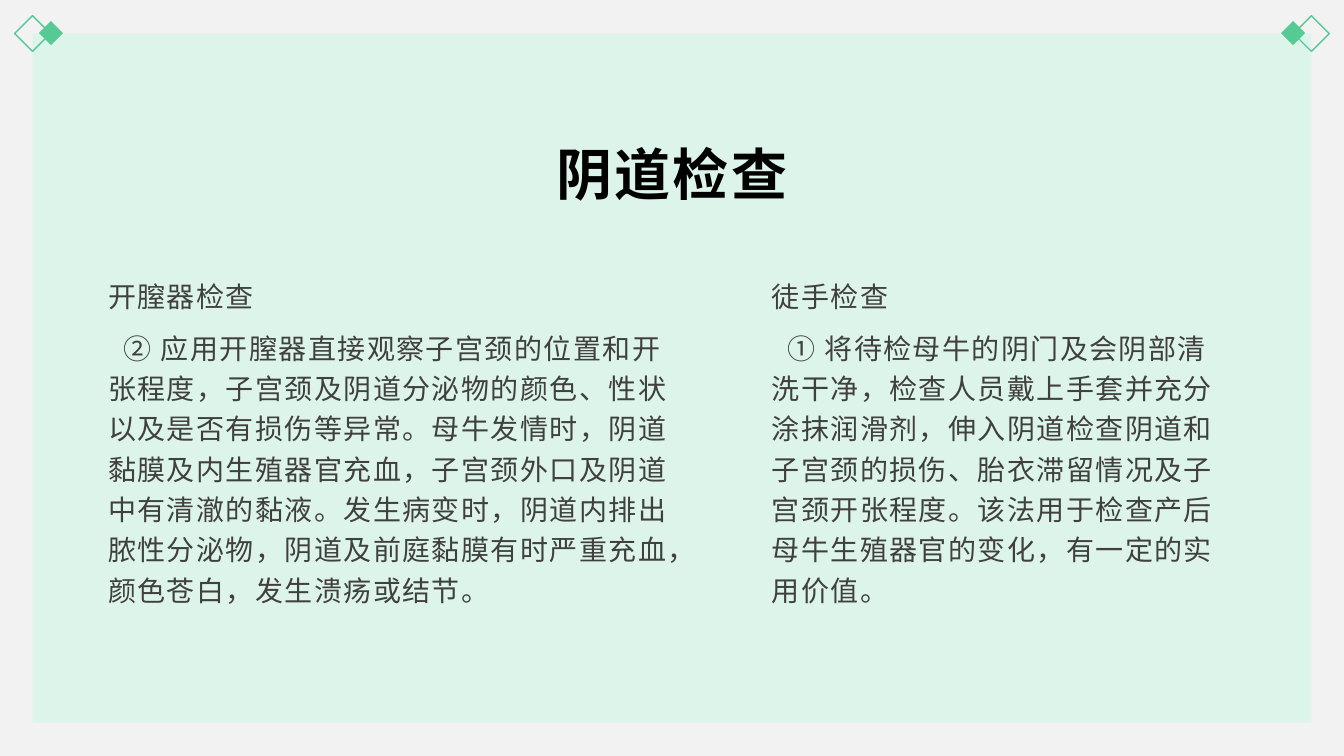
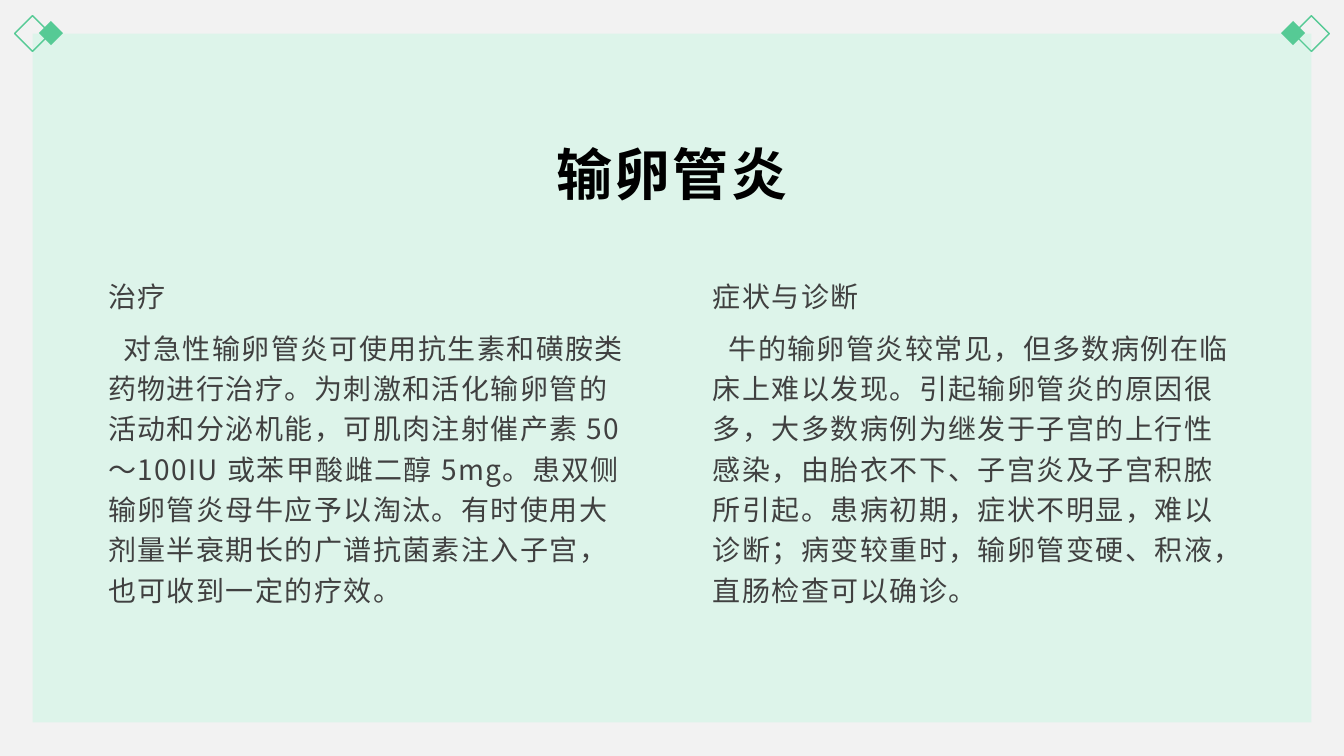
from lxml import etree
from pptx import Presentation
from pptx.dml.color import RGBColor
from pptx.enum.shapes import MSO_SHAPE
from pptx.enum.text import MSO_ANCHOR, MSO_AUTO_SIZE, PP_ALIGN
from pptx.oxml.ns import qn
from pptx.util import Pt

RECTANGLE = MSO_SHAPE.RECTANGLE
DIAMOND = MSO_SHAPE.DIAMOND
MIDDLE = MSO_ANCHOR.MIDDLE
NO_AUTOFIT = MSO_AUTO_SIZE.NONE
CENTER = PP_ALIGN.CENTER
LEFT = PP_ALIGN.LEFT

PAPER = RGBColor(0xF2, 0xF2, 0xF2)
PANEL = RGBColor(0xDD, 0xF4, 0xEA)
GREEN = RGBColor(0x56, 0xCA, 0x95)
BLACK = RGBColor(0x00, 0x00, 0x00)
GRAY = RGBColor(0x40, 0x40, 0x40)

FONT = "Noto Sans CJK SC"
EMU_PER_PX = 9525
WIDTH, HEIGHT = 1280, 720
MARGIN, GAP = 96, 64
CONTENT_WIDTH = WIDTH - 2 * MARGIN
TWO_CONTENT_LAYOUT = 3


def px(length):
    return length * EMU_PER_PX


class Deck:
    """Holds the shared style and the current slide."""

    def __init__(self):
        self.presentation = Presentation()
        self.presentation.slide_width = px(WIDTH)
        self.presentation.slide_height = px(HEIGHT)
        fill = self.presentation.slide_master.background.fill
        fill.solid()
        fill.fore_color.rgb = PAPER
        self.slide = None

    def add_slide(self):
        layout = self.presentation.slide_layouts[TWO_CONTENT_LAYOUT]
        self.slide = self.presentation.slides.add_slide(layout)
        placeholders = list(self.slide.placeholders)
        self.frame()
        # Bring the text in front of the panel
        for placeholder in placeholders:
            self.slide.shapes._spTree.append(placeholder._element)

    def shape(self, shapes, kind, box, fill=None, line=None):
        shape = shapes.add_shape(kind, *map(px, box))
        shape.shadow.inherit = False
        if fill is None:
            shape.fill.background()
        else:
            shape.fill.solid()
            shape.fill.fore_color.rgb = fill
        if line is None:
            shape.line.fill.background()
        else:
            shape.line.color.rgb = line
            shape.line.width = Pt(1)

    def frame(self):
        """Panel with a mirrored pair of diamonds in the top corners."""
        shapes = self.slide.shapes
        self.shape(shapes, RECTANGLE, (31, 32, WIDTH - 62, 656), fill=PANEL)
        for mirrored in (True, False):
            group = shapes.add_group_shape()
            for left, top, size, fill, line in ((37, 20, 23, GREEN, None),
                                                (14, 15, 34, None, GREEN)):
                if mirrored:
                    left = WIDTH - left - size
                self.shape(group.shapes, DIAMOND, (left, top, size, size), fill, line)

    def place(self, placeholder, left, top, width, height):
        placeholder.left, placeholder.top = px(left), px(top)
        placeholder.width, placeholder.height = px(width), px(height)
        text_frame = placeholder.text_frame
        text_frame.word_wrap = True
        text_frame.auto_size = NO_AUTOFIT
        text_frame.vertical_anchor = MIDDLE
        text_frame.margin_left = text_frame.margin_right = px(7)
        text_frame.margin_top = text_frame.margin_bottom = px(3)
        return text_frame

    def format_runs(self, paragraph, size, color, bold, spacing):
        for run in paragraph.runs:
            run.font.size = Pt(size)
            run.font.bold = bold
            run.font.color.rgb = color
            run.font.name = FONT
            properties = run.font._element
            properties.set("spc", str(spacing))
            east_asian = etree.Element(qn("a:ea"), typeface=FONT)
            properties.find(qn("a:latin")).addnext(east_asian)

    def title(self, text):
        text_frame = self.place(self.slide.shapes.title, MARGIN, 128, CONTENT_WIDTH, 74)
        text_frame.text = text
        paragraph = text_frame.paragraphs[0]
        paragraph.alignment = CENTER
        self.format_runs(paragraph, 40, BLACK, True, 160)

    def column(self, index, left, width, heading, body):
        text_frame = self.place(self.slide.placeholders[index], left, 250, width, 338)
        text_frame.text = f"{heading}\n{body}"
        for paragraph, indent in zip(text_frame.paragraphs, (0, 15)):
            properties = paragraph._p.get_or_add_pPr()
            properties.set("marL", "0")
            properties.set("indent", str(px(indent)))
            etree.SubElement(properties, qn("a:buNone"))
            paragraph.alignment = LEFT
            paragraph.line_spacing = 1.2
            paragraph.space_before = Pt(0)
            paragraph.space_after = Pt(8)
            self.format_runs(paragraph, 20, GRAY, False, 100)

    def columns(self, left_width, left_text, right_text):
        self.column(1, MARGIN, left_width, *left_text)
        right_width = CONTENT_WIDTH - left_width - GAP
        self.column(2, MARGIN + left_width + GAP, right_width, *right_text)


# Title, width of the left column, then heading and body of each column
SLIDES = [
    (
        "阴道检查", 568,
        ("开膣器检查",
         "② 应用开膣器直接观察子宫颈的位置和开张程度，子宫颈及阴道分泌物的颜色、性状"
         "以及是否有损伤等异常。母牛发情时，阴道黏膜及内生殖器官充血，子宫颈外口及阴道"
         "中有清澈的黏液。发生病变时，阴道内排出脓性分泌物，阴道及前庭黏膜有时严重充血，"
         "颜色苍白，发生溃疡或结节。"),
        ("徒手检查",
         "① 将待检母牛的阴门及会阴部清洗干净，检查人员戴上手套并充分涂抹润滑剂，"
         "伸入阴道检查阴道和子宫颈的损伤、胎衣滞留情况及子宫颈开张程度。"
         "该法用于检查产后母牛生殖器官的变化，有一定的实用价值。"),
    ),
    (
        "输卵管炎", 512,
        ("治疗",
         "对急性输卵管炎可使用抗生素和磺胺类药物进行治疗。为刺激和活化输卵管的"
         "活动和分泌机能，可肌肉注射催产素 50～100IU 或苯甲酸雌二醇 5mg。患双"
         "侧输卵管炎母牛应予以淘汰。有时使用大剂量半衰期长的广谱抗菌素注入子宫，"
         "也可收到一定的疗效。"),
        ("症状与诊断",
         "牛的输卵管炎较常见，但多数病例在临床上难以发现。引起输卵管炎的原因很"
         "多，大多数病例为继发于子宫的上行性感染，由胎衣不下、子宫炎及子宫积脓"
         "所引起。患病初期，症状不明显，难以诊断；病变较重时，输卵管变硬、积液，"
         "直肠检查可以确诊。"),
    ),
]


def main():
    deck = Deck()
    for title, left_width, left_text, right_text in SLIDES:
        deck.add_slide()
        deck.title(title)
        deck.columns(left_width, left_text, right_text)
    deck.presentation.save("out.pptx")


if __name__ == "__main__":
    main()
